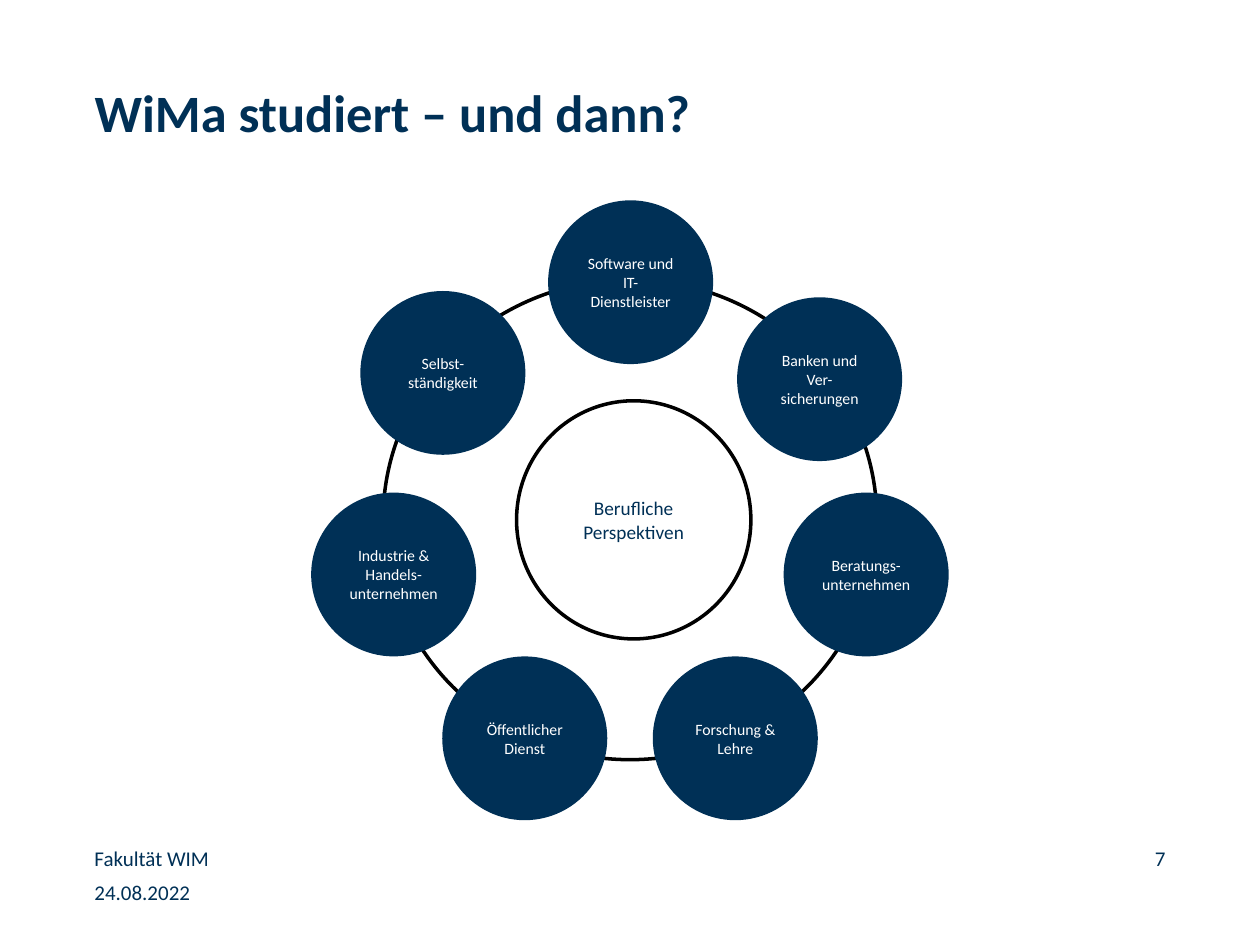
import dataclasses

import pptx
import pptx.dml.color
import pptx.enum.shapes
import pptx.enum.text
import pptx.util

Pt = pptx.util.Pt
Align = pptx.enum.text.PP_ALIGN
Anchor = pptx.enum.text.MSO_ANCHOR

NAVY = pptx.dml.color.RGBColor(0x00, 0x30, 0x56)
BLACK = pptx.dml.color.RGBColor(0x00, 0x00, 0x00)
WHITE = pptx.dml.color.RGBColor(0xFF, 0xFF, 0xFF)
FONT = "Calibri"


@dataclasses.dataclass(frozen=True)
class Label:
    text: str
    left: float
    top: float
    width: float
    height: float
    size: float = 12
    bold: bool = False
    align: Align = Align.LEFT


@dataclasses.dataclass(frozen=True)
class Circle:
    left: float
    top: float
    text: str = ""
    width: float = 94.3
    height: float = 93.6
    size: float = 9
    filled: bool = True


LABELS = [
    Label("WiMa studiert – und dann?", 54, 46, 431.3, 36.7, size=30, bold=True),
    Label("24.08.2022", 54, 502.6, 167.8, 14.4),
    Label("Fakultät WIM", 54, 483.1, 228.2, 14.4),
    Label("7", 583.2, 483.1, 82.8, 14.4, align=Align.RIGHT),
]

# Back to front: ring, hub, then the career fields clockwise from the top
CIRCLES = [
    Circle(218.9, 159.8, width=282.2, height=274.3, filled=False),
    Circle(295.2, 229, "Berufliche Perspektiven", 133.9, 136.1, 11, False),
    Circle(313.2, 114.5, "Software und IT-Dienstleister"),
    Circle(421.2, 169.9, "Banken und Ver-sicherungen"),
    Circle(447.8, 281.5, "Beratungs-unternehmen"),
    Circle(373, 375.1, "Forschung & Lehre"),
    Circle(252.7, 375.1, "Öffentlicher Dienst"),
    Circle(177.8, 281.5, "Industrie & Handels-unternehmen"),
    Circle(205.9, 166.3, "Selbst-ständigkeit"),
]


def write_text(frame, text: str, size: float, color, align: Align, bold: bool = False) -> None:
    frame.word_wrap = True
    frame.text = text
    para = frame.paragraphs[0]
    para.alignment = align
    for span in para.runs:
        span.font.name = FONT
        span.font.size = Pt(size)
        span.font.bold = bold
        span.font.color.rgb = color


def draw_label(page, label: Label) -> None:
    box = page.shapes.add_textbox(
        Pt(label.left), Pt(label.top), Pt(label.width), Pt(label.height))
    frame = box.text_frame
    frame.margin_left = frame.margin_right = frame.margin_top = frame.margin_bottom = 0
    write_text(frame, label.text, label.size, NAVY, label.align, label.bold)


def draw_circle(group, circle: Circle) -> None:
    shape = group.shapes.add_shape(
        pptx.enum.shapes.MSO_SHAPE.OVAL,
        Pt(circle.left), Pt(circle.top), Pt(circle.width), Pt(circle.height))
    shape.shadow.inherit = False
    if circle.filled:
        shape.fill.solid()
        shape.fill.fore_color.rgb = NAVY
        shape.line.fill.background()
    else:
        shape.fill.background()
        shape.line.color.rgb = BLACK
        shape.line.width = Pt(2)
    if circle.text:
        shape.text_frame.vertical_anchor = Anchor.MIDDLE
        color = WHITE if circle.filled else NAVY
        write_text(shape.text_frame, circle.text, circle.size, color, Align.CENTER)


def main() -> None:
    deck = pptx.Presentation()
    deck.slide_width, deck.slide_height = Pt(720), Pt(540)
    page = deck.slides.add_slide(deck.slide_layouts[6])

    # Title and footer
    for label in LABELS:
        draw_label(page, label)

    # Career wheel
    wheel = page.shapes.add_group_shape()
    for circle in CIRCLES:
        draw_circle(wheel, circle)

    deck.save("out.pptx")


if __name__ == "__main__":
    main()
